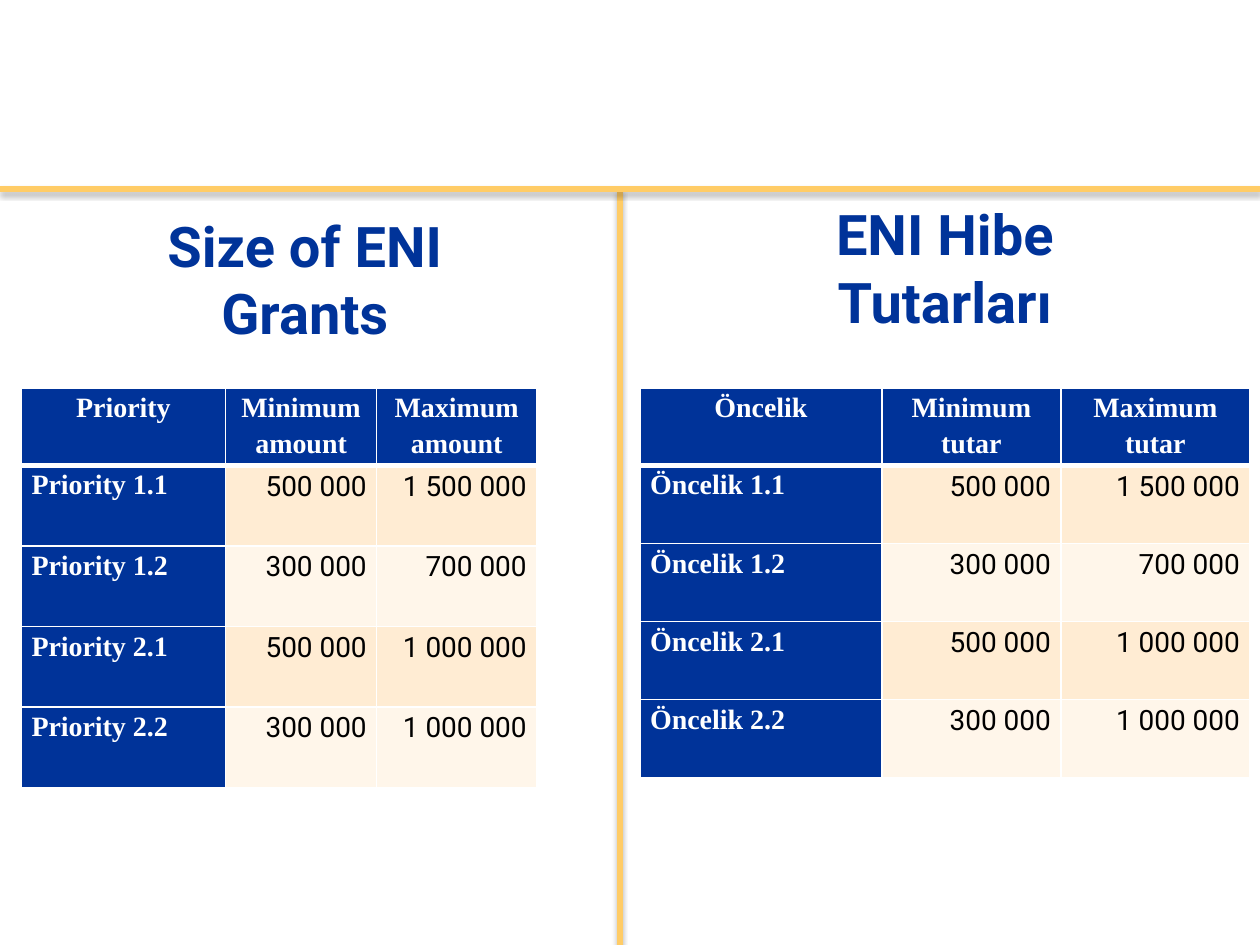
from dataclasses import dataclass

from lxml import etree
from pptx import Presentation
from pptx.dml.color import RGBColor
from pptx.enum.shapes import MSO_CONNECTOR
from pptx.enum.text import MSO_ANCHOR, PP_ALIGN
from pptx.oxml import parse_xml
from pptx.oxml.ns import nsdecls, qn
from pptx.util import Inches, Pt

STRAIGHT = MSO_CONNECTOR.STRAIGHT
MIDDLE = MSO_ANCHOR.MIDDLE
CENTER, RIGHT, JUSTIFY = PP_ALIGN.CENTER, PP_ALIGN.RIGHT, PP_ALIGN.JUSTIFY


@dataclass(frozen=True)
class Theme:
    blue: str = "003399"
    gold: str = "FFCC66"
    white: str = "FFFFFF"
    black: str = "000000"
    bands: tuple = ("FFECD3", "FFF6EA")
    sans: str = "Roboto"
    serif: str = "Times New Roman"
    title_size: int = 32
    table_size: int = 16
    rule_width: int = 3


THEME = Theme()
LABEL_FONT = {"name": THEME.serif, "size": Pt(THEME.table_size), "bold": True}
AMOUNT_FONT = {"name": THEME.sans, "size": Pt(THEME.table_size), "bold": False}
TITLE_FONT = {"name": THEME.sans, "size": Pt(THEME.title_size), "bold": True}
CELL_MARGINS = {
    "margin_left": Inches(0.08),
    "margin_right": Inches(0.08),
    "margin_top": 0,
    "margin_bottom": 0,
}
AMOUNTS = [
    ("500 000", "1 500 000"),
    ("300 000", "700 000"),
    ("500 000", "1 000 000"),
    ("300 000", "1 000 000"),
]
PRIORITIES = ["1.1", "1.2", "2.1", "2.2"]
TABLE_TOP, HEADER_HEIGHT = 3.08, 0.61
PANELS = [
    {
        "title": "Size of ENI Grants", "title_at": (0.67, 1.67),
        "label": "Priority", "unit": "amount",
        "left": 0.17, "columns": (1.62, 1.2, 1.27), "row_height": 0.64,
    },
    {
        "title": "ENI Hibe Tutarları", "title_at": (5.75, 1.58),
        "label": "Öncelik", "unit": "tutar",
        "left": 5.08, "columns": (1.92, 1.42, 1.5), "row_height": 0.62,
    },
]
RULES = [((4.92, 1.5), (4.92, 7.5)), ((0, 1.5), (10, 1.5))]


def write_text(text_frame, text, alignment, font_format, color):
    paragraph = text_frame.paragraphs[0]
    paragraph.alignment = alignment
    run = paragraph.add_run()
    run.text = text
    for name, value in font_format.items():
        setattr(run.font, name, value)
    run.font.color.rgb = RGBColor.from_string(color)
    return paragraph


def add_borders(cell, widths):
    """Draw white cell borders; widths maps L, R, T, B to points, in that order."""
    properties = cell._tc.get_or_add_tcPr()
    for side, width in widths.items():
        properties.append(parse_xml(
            f'<a:ln{side} {nsdecls("a")} w="{Pt(width)}"><a:solidFill>'
            f'<a:srgbClr val="{THEME.white}"/></a:solidFill></a:ln{side}>'
        ))


presentation = Presentation()
presentation.slide_width, presentation.slide_height = Inches(10), Inches(7.5)
slide = presentation.slides.add_slide(presentation.slide_layouts[6])

for panel in PANELS:
    title_left, title_top = panel["title_at"]
    title = slide.shapes.add_textbox(
        Inches(title_left), Inches(title_top), Inches(3.5), Inches(1.08))
    title.text_frame.word_wrap = True
    title.text_frame.vertical_anchor = MIDDLE
    write_text(title.text_frame, panel["title"], CENTER, TITLE_FONT, THEME.blue)

    header = (panel["label"], f"Minimum {panel['unit']}", f"Maximum {panel['unit']}")
    rows = [header] + [
        (f"{panel['label']} {number}", *amounts)
        for number, amounts in zip(PRIORITIES, AMOUNTS)
    ]
    heights = [HEADER_HEIGHT] + [panel["row_height"]] * len(AMOUNTS)
    table = slide.shapes.add_table(
        len(rows), len(header), Inches(panel["left"]), Inches(TABLE_TOP),
        Inches(sum(panel["columns"])), Inches(sum(heights))).table
    table.first_col = True
    for column, width in zip(table.columns, panel["columns"]):
        column.width = Inches(width)

    for row_index, (values, height) in enumerate(zip(rows, heights)):
        table.rows[row_index].height = Inches(height)
        for column_index, text in enumerate(values):
            cell = table.cell(row_index, column_index)
            for name, value in CELL_MARGINS.items():
                setattr(cell, name, value)
            add_borders(cell, {
                "L": 1, "R": 1,
                "T": 3 if row_index == 1 else 1,
                "B": 3 if row_index == 0 else 1,
            })
            if row_index == 0:
                style = CENTER, LABEL_FONT, THEME.white
                fill = THEME.blue
            elif column_index == 0:
                style = JUSTIFY, LABEL_FONT, THEME.white
                fill = THEME.blue
            else:
                style = RIGHT, AMOUNT_FONT, THEME.black
                fill = THEME.bands[(row_index - 1) % 2]
            cell.fill.solid()
            cell.fill.fore_color.rgb = RGBColor.from_string(fill)
            write_text(cell.text_frame, text, *style).line_spacing = 1.15

for start, end in RULES:
    rule = slide.shapes.add_connector(STRAIGHT, *map(Inches, start + end))
    rule.line.color.rgb = RGBColor.from_string(THEME.gold)
    rule.line.width = Pt(THEME.rule_width)
    effects = etree.SubElement(rule._element.spPr, qn("a:effectLst"))
    shadow = etree.SubElement(
        effects, qn("a:outerShdw"), blurRad=str(Pt(3.1)), dist=str(Pt(1.8)),
        dir="5400000", rotWithShape="0")
    shadow_color = etree.SubElement(shadow, qn("a:srgbClr"), val=THEME.black)
    etree.SubElement(shadow_color, qn("a:alpha"), val="35000")

presentation.save("out.pptx")
